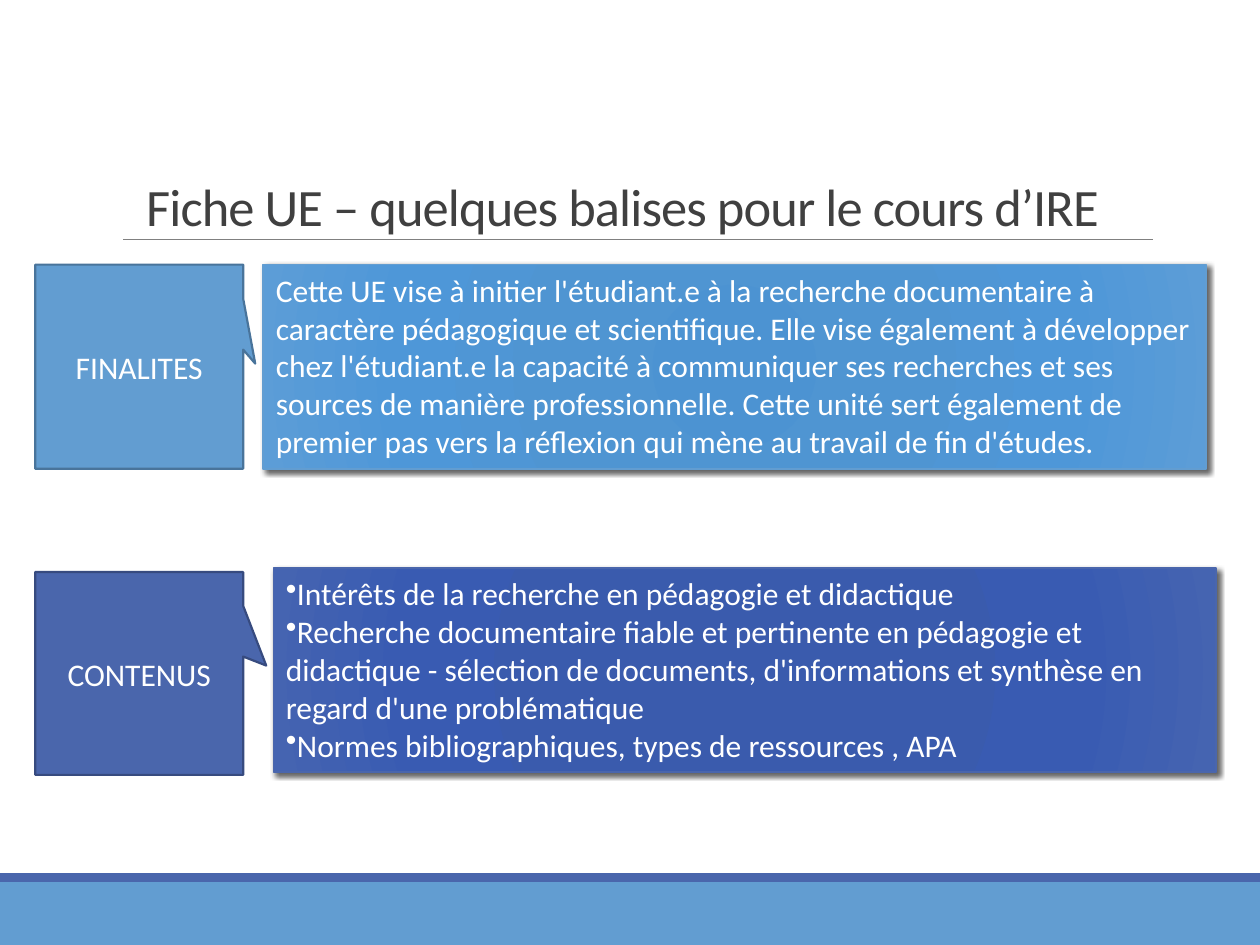
"""Build a course sheet slide: two labelled callouts with their text panels."""
from dataclasses import dataclass

from lxml import etree
from pptx import Presentation, util as u
from pptx.dml.color import RGBColor
from pptx.enum import shapes, text
from pptx.oxml import parse_xml
from pptx.oxml.ns import nsdecls, qn

WHITE = RGBColor(0xFF, 0xFF, 0xFF)
DARK = RGBColor(0x40, 0x40, 0x40)
GREY = RGBColor(0x80, 0x80, 0x80)
SKY = RGBColor(0x62, 0x9D, 0xD1)
NAVY = RGBColor(0x4A, 0x66, 0xAC)
SKY_EDGE = RGBColor(0x49, 0x74, 0x9B)
NAVY_EDGE = RGBColor(0x37, 0x4B, 0x7F)
SKY_FADE = (RGBColor(0x4C, 0x93, 0xD2), RGBColor(0x4F, 0x95, 0xD2),
            RGBColor(0x4E, 0x97, 0xD8), RGBColor(0x5C, 0x9D, 0xD7))
NAVY_FADE = (RGBColor(0x37, 0x59, 0xAE), RGBColor(0x3A, 0x5B, 0xAD),
             RGBColor(0x39, 0x5B, 0xB2), RGBColor(0x45, 0x64, 0xB1))
STOPS = (0, 34, 70, 100)
FONT = "Calibri"
COLS, ROWS = 100, 75
Box = tuple[float, float, float, float]


@dataclass
class Topic:
    """One label callout and its panel, in grid columns and rows."""
    label: str
    tag: Box
    tip: tuple[float, float]
    panel: Box
    lines: list[str]
    bullet: bool
    fill: RGBColor
    edge: RGBColor
    fade: tuple[RGBColor, ...]


TOPICS = [
    Topic("FINALITES", (2.8, 21, 16.5, 16.2), (0.558, -0.015), (20.9, 21, 74.8, 16.2),
          ["Cette UE vise à initier l'étudiant.e à la recherche documentaire à "
           "caractère pédagogique et scientifique. Elle vise également à développer "
           "chez l'étudiant.e la capacité à communiquer ses recherches et ses "
           "sources de manière professionnelle. Cette unité sert également de "
           "premier pas vers la réflexion qui mène au travail de fin d'études."],
          False, SKY, SKY_EDGE, SKY_FADE),
    Topic("CONTENUS", (2.8, 45.4, 16.5, 16.1), (0.611, -0.039), (21.7, 45.1, 74.8, 16.2),
          ["Intérêts de la recherche en pédagogie et didactique",
           "Recherche documentaire fiable et pertinente en pédagogie et didactique - "
           "sélection de documents, d'informations et synthèse en regard d'une "
           "problématique",
           "Normes bibliographiques, types de ressources , APA"],
          True, NAVY, NAVY_EDGE, NAVY_FADE),
]

deck = Presentation()
deck.slide_width, deck.slide_height = u.Inches(10), u.Inches(7.5)
slide = deck.slides.add_slide(deck.slide_layouts[5])


def place(box: Box) -> list[int]:
    """Turn grid columns and rows into slide lengths."""
    wide, high = deck.slide_width / COLS, deck.slide_height / ROWS
    return [round(n * unit) for n, unit in zip(box, (wide, high, wide, high))]


def draw(kind: shapes.MSO_SHAPE, box: Box, fill: RGBColor,
         edge: RGBColor | None = None, width: float = 1):
    """Add a flat preset shape."""
    shape = slide.shapes.add_shape(kind, *place(box))
    shape.shadow.inherit = False
    shape.fill.solid()
    shape.fill.fore_color.rgb = fill
    if edge is None:
        shape.line.fill.background()
    else:
        shape.line.color.rgb = edge
        shape.line.width = u.Pt(width)
    return shape


def write(para, words: str, size: float, color: RGBColor):
    """Add one formatted run to a paragraph."""
    run = para.add_run()
    run.text = words
    run.font.name, run.font.size = FONT, u.Pt(size)
    run.font.color.rgb = color
    return run


def blend(shape, fade: tuple[RGBColor, ...]) -> None:
    """Replace the solid fill with a round gradient and cast a shadow."""
    stops = "".join(f'<a:gs pos="{at * 1000}"><a:srgbClr val="{hue}"/></a:gs>'
                    for at, hue in zip(STOPS, fade))
    grad = parse_xml(
        f'<a:gradFill {nsdecls("a")} rotWithShape="1"><a:gsLst>{stops}</a:gsLst>'
        '<a:path path="circle"><a:fillToRect l="100000" t="100000" r="100000" '
        'b="100000"/></a:path></a:gradFill>')
    props = shape.element.spPr
    props.replace(props.find(qn("a:solidFill")), grad)
    props.find(qn("a:effectLst")).append(parse_xml(
        f'<a:outerShdw {nsdecls("a")} blurRad="{u.Pt(3)}" dist="{u.Pt(2)}" '
        f'dir="{45 * 60000}" algn="tl" rotWithShape="0"><a:srgbClr val="000000">'
        '<a:alpha val="60000"/></a:srgbClr></a:outerShdw>'))


def panel(topic: Topic) -> None:
    """Draw the text panel of a topic."""
    shape = draw(shapes.MSO_SHAPE.RECTANGLE, topic.panel, topic.fill, topic.fill)
    blend(shape, topic.fade)
    frame = shape.text_frame
    frame.word_wrap = True
    frame.auto_size = text.MSO_AUTO_SIZE.SHAPE_TO_FIT_TEXT
    frame.vertical_anchor = text.MSO_ANCHOR.TOP
    for i, line in enumerate(topic.lines):
        para = frame.add_paragraph() if i else frame.paragraphs[0]
        para.alignment = text.PP_ALIGN.LEFT
        write(para, line, 18, WHITE)
        if topic.bullet:
            props = para._p.get_or_add_pPr()
            etree.SubElement(props, qn("a:buChar")).set("char", "•")


def tag(topic: Topic) -> None:
    """Draw the label callout of a topic."""
    shape = draw(shapes.MSO_SHAPE.RECTANGULAR_CALLOUT, topic.tag,
                 topic.fill, topic.edge, 1.25)
    shape.adjustments[0], shape.adjustments[1] = topic.tip
    frame = shape.text_frame
    frame.vertical_anchor = text.MSO_ANCHOR.MIDDLE
    para = frame.paragraphs[0]
    para.alignment = text.PP_ALIGN.CENTER
    write(para, topic.label, 18, WHITE)


def head(words: str, box: Box) -> None:
    """Move and format the title placeholder."""
    title = slide.shapes.title
    title.left, title.top, title.width, title.height = place(box)
    frame = title.text_frame
    frame.word_wrap = True
    frame.auto_size = text.MSO_AUTO_SIZE.NONE
    frame.vertical_anchor = text.MSO_ANCHOR.BOTTOM
    para = frame.paragraphs[0]
    para.alignment = text.PP_ALIGN.LEFT
    para.line_spacing = 0.85
    run = write(para, words, 30, DARK)
    run.font._element.set("spc", "-50")


def rule(box: Box) -> None:
    """Draw the thin line under the title."""
    line = slide.shapes.add_connector(shapes.MSO_CONNECTOR.STRAIGHT, *place(box))
    line.line.color.rgb = GREY
    line.line.width = u.Pt(0.5)
    etree.SubElement(line._element.spPr, qn("a:effectLst"))


def main() -> None:
    """Draw the slide and save it."""
    draw(shapes.MSO_SHAPE.RECTANGLE, (0, 70, COLS, 5), SKY)
    draw(shapes.MSO_SHAPE.RECTANGLE, (0, 69.3, COLS, 0.7), NAVY)
    rule((9.8, 19, 91.5, 19))
    head("Fiche UE – quelques balises pour le cours d’IRE", (10.6, 13.1, 94.9, 6.2))
    for part in (panel, tag):
        for topic in TOPICS:
            part(topic)
    deck.save("out.pptx")


if __name__ == "__main__":
    main()
